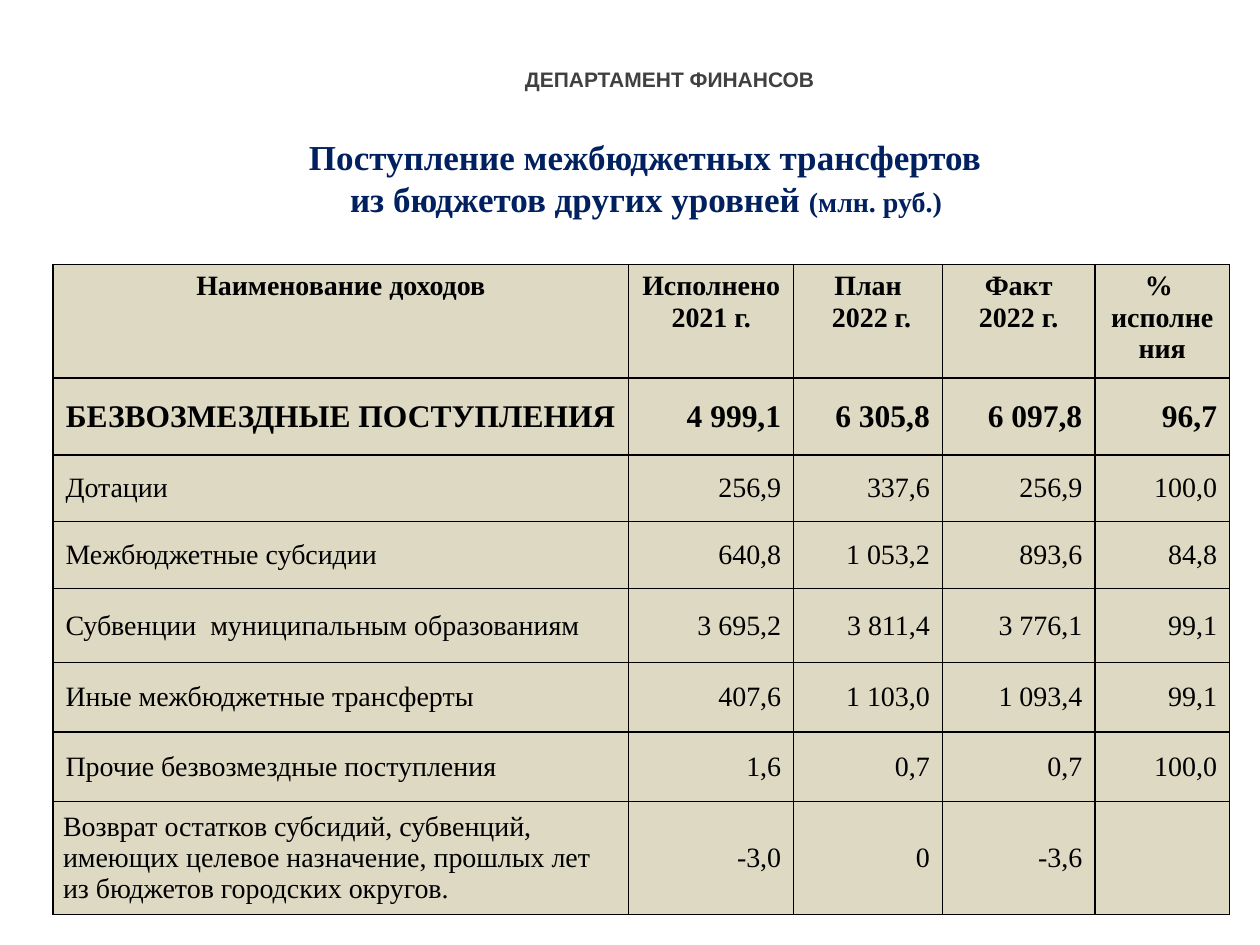
from lxml import etree
from pptx import Presentation
from pptx.dml.color import RGBColor
from pptx.enum.text import MSO_ANCHOR, PP_ALIGN
from pptx.oxml.ns import qn
from pptx.util import Inches, Pt

LEFT, CENTER, RIGHT = PP_ALIGN.LEFT, PP_ALIGN.CENTER, PP_ALIGN.RIGHT
TOP, MIDDLE = MSO_ANCHOR.TOP, MSO_ANCHOR.MIDDLE
SERIF, SANS = "Times New Roman", "Arial"
BLACK, NAVY, GREY, BEIGE = "000000", "002060", "404040", "DDD9C3"

COLUMN_WIDTHS = [4.57, 1.31, 1.18, 1.21, 1.07]
ROW_HEIGHTS = [0.9, 0.61, 0.53, 0.53, 0.59, 0.55, 0.55, 0.9]
HANGING = 0.38
HEADER = ["Наименование доходов", "Исполнено\n2021 г.", "План\n 2022 г.",
          "Факт\n2022 г.", "% \nисполне\nния"]
INCOME = [
    ["БЕЗВОЗМЕЗДНЫЕ ПОСТУПЛЕНИЯ", "4 999,1", "6 305,8", "6 097,8", "96,7"],
    ["Дотации", "256,9", "337,6", "256,9", "100,0"],
    ["Межбюджетные субсидии", "640,8", "1 053,2", "893,6", "84,8"],
    ["Субвенции  муниципальным образованиям", "3 695,2", "3 811,4", "3 776,1", "99,1"],
    ["Иные межбюджетные трансферты", "407,6", "1 103,0", "1 093,4", "99,1"],
    ["Прочие безвозмездные поступления", "1,6", "0,7", "0,7", "100,0"],
    ["Возврат остатков субсидий, субвенций,\nимеющих целевое назначение, прошлых лет\n"
     "из бюджетов городских округов.", "-3,0", "0", "-3,6", ""],
]


def rgb(color):
    return RGBColor.from_string(color)


def add_run(p, text, size, color, bold=False, font=SERIF):
    r = p.add_run()
    r.text = text
    r.font.name = font
    r.font.size = Pt(size)
    r.font.bold = bold
    r.font.color.rgb = rgb(color)


def add_text(slide, left, top, width, height, lines, anchor=TOP):
    """Add a centred text box; each line is a list of add_run arguments."""
    tf = slide.shapes.add_textbox(Inches(left), Inches(top),
                                  Inches(width), Inches(height)).text_frame
    tf.word_wrap = True
    tf.vertical_anchor = anchor
    for i, runs in enumerate(lines):
        p = tf.add_paragraph() if i else tf.paragraphs[0]
        p.alignment = CENTER
        for run in runs:
            add_run(p, *run)


def set_borders(cell, color=BLACK, width=1):
    tcPr = cell._tc.get_or_add_tcPr()
    for i, side in enumerate(("a:lnL", "a:lnR", "a:lnT", "a:lnB")):
        ln = etree.Element(qn(side), w=str(Pt(width)))
        fill = etree.SubElement(ln, qn("a:solidFill"))
        etree.SubElement(fill, qn("a:srgbClr"), val=color)
        tcPr.insert(i, ln)


def fill_cell(cell, text, size, bold, align, anchor, insets):
    cell.fill.solid()
    cell.fill.fore_color.rgb = rgb(BEIGE)
    set_borders(cell)
    cell.vertical_anchor = anchor
    cell.margin_left, cell.margin_right = (Inches(inset) for inset in insets)
    cell.margin_top = cell.margin_bottom = Inches(0.05)
    tf = cell.text_frame
    for i, line in enumerate(text.split("\n")):
        p = tf.add_paragraph() if i else tf.paragraphs[0]
        p.alignment = align
        pPr = p._p.get_or_add_pPr()
        pPr.set("marL", str(Inches(HANGING)))
        pPr.set("indent", str(Inches(-HANGING)))
        if line:
            add_run(p, line, size, BLACK, bold)


def cell_style(row, col):
    """Return size, bold, alignment, anchor and side insets of a cell."""
    size = 18 if row == 1 else 16
    align = CENTER if row == 0 or (row, col) == (1, 0) else RIGHT if col else LEFT
    anchor = MIDDLE if row else TOP
    narrow = {(0, 2): (0.02, 0.02), (len(INCOME), 0): (0.08, 0)}
    return size, row < 2, align, anchor, narrow.get((row, col), (0.1, 0.1))


def add_income_table(slide, left, top):
    rows = [HEADER] + INCOME
    table = slide.shapes.add_table(
        len(rows), len(HEADER), Inches(left), Inches(top),
        Inches(sum(COLUMN_WIDTHS)), Inches(sum(ROW_HEIGHTS))).table
    for column, width in zip(table.columns, COLUMN_WIDTHS):
        column.width = Inches(width)
    for row, height in zip(table.rows, ROW_HEIGHTS):
        row.height = Inches(height)
    for i, texts in enumerate(rows):
        for j, text in enumerate(texts):
            fill_cell(table.cell(i, j), text, *cell_style(i, j))


def main():
    prs = Presentation()
    prs.slide_width, prs.slide_height = Inches(10), Inches(7.5)
    slide = prs.slides.add_slide(prs.slide_layouts[6])
    add_text(slide, 3.27, 0.39, 4.09, 0.47,
             [[("ДЕПАРТАМЕНТ ФИНАНСОВ", 12, GREY, True, SANS)]], MIDDLE)
    add_text(slide, 1.69, 1.03, 6.93, 0.77, [
        [("Поступление межбюджетных трансфертов ", 20, NAVY, True)],
        [("из бюджетов других уровней ", 20, NAVY, True),
         ("(млн. руб.) ", 16, NAVY, True)],
    ])
    add_income_table(slide, 0.42, 2.1)
    prs.save("out.pptx")


if __name__ == "__main__":
    main()
